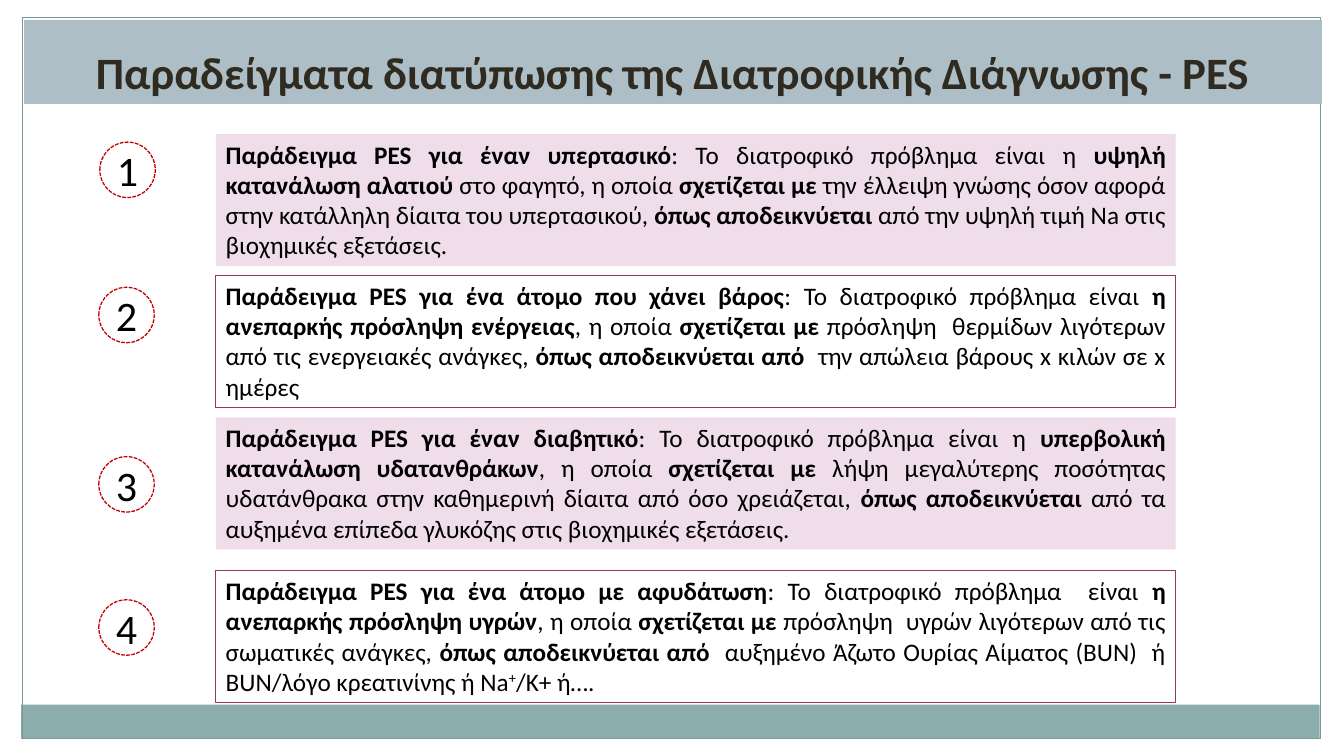
from pptx import Presentation
from pptx import util as u
from pptx.dml.color import RGBColor
from pptx.enum import dml, shapes, text

BLACK = RGBColor(0x00, 0x00, 0x00)
WHITE = RGBColor(0xFF, 0xFF, 0xFF)
TITLE_TEXT = RGBColor(0x2F, 0x2B, 0x20)
TITLE_BAND = RGBColor(0xAD, 0xBE, 0xC6)
FOOTER_BAND = RGBColor(0x8C, 0xAD, 0xAE)
FRAME = RGBColor(0x7C, 0x99, 0x9A)
PINK = RGBColor(0xEF, 0xDD, 0xEA)
PLUM = RGBColor(0x99, 0x33, 0x66)
RED = RGBColor(0xC0, 0x00, 0x00)

TITLE = "Παραδείγματα διατύπωσης της Διατροφικής Διάγνωσης - PES"

# ** toggles bold, ^ toggles superscript
EXAMPLES = [
    (1.33, 0.99, 1.41,
     "**Παράδειγμα PES για έναν υπερτασικό**: Το διατροφικό πρόβλημα είναι η "
     "**υψηλή κατανάλωση αλατιού** στο φαγητό, η οποία **σχετίζεται με** την "
     "έλλειψη γνώσης όσον αφορά στην κατάλληλη δίαιτα του υπερτασικού, "
     "**όπως αποδεικνύεται** από την υψηλή τιμή Na στις βιοχημικές εξετάσεις."),
    (2.73, 0.98, 2.85,
     "**Παράδειγμα PES για ένα άτομο που χάνει βάρος**: Το διατροφικό πρόβλημα "
     "είναι **η ανεπαρκής πρόσληψη ενέργειας**, η οποία **σχετίζεται με** "
     "πρόσληψη  θερμίδων λιγότερων από τις ενεργειακές ανάγκες, "
     "**όπως αποδεικνύεται από  **την απώλεια βάρους x κιλών σε x ημέρες"),
    (4.14, 0.98, 4.53,
     "**Παράδειγμα PES για έναν διαβητικό**: Το διατροφικό πρόβλημα είναι η "
     "**υπερβολική κατανάλωση υδατανθράκων**, η οποία **σχετίζεται με** λήψη "
     "μεγαλύτερης ποσότητας υδατάνθρακα στην καθημερινή δίαιτα από όσο "
     "χρειάζεται, **όπως αποδεικνύεται** από τα αυξημένα επίπεδα γλυκόζης στις "
     "βιοχημικές εξετάσεις."),
    (5.66, 0.98, 5.95,
     "**Παράδειγμα PES για ένα άτομο με αφυδάτωση**: Το διατροφικό πρόβλημα  "
     "είναι **η ανεπαρκής πρόσληψη υγρών**, η οποία **σχετίζεται με** πρόσληψη  "
     "υγρών λιγότερων από τις σωματικές ανάγκες, **όπως αποδεικνύεται από  **"
     "αυξημένο Άζωτο Ουρίας Αίματος (BUN)  ή BUN/λόγο κρεατινίνης ή "
     "Na^+^/K+ ή…."),
]


class DiagnosisSlide:
    font_name = "Calibri"

    def __init__(self, presentation):
        self.slide = presentation.slides.add_slide(presentation.slide_layouts[5])

    def style(self, paragraph, size, color, alignment):
        paragraph.alignment = alignment
        paragraph.font.name = self.font_name
        paragraph.font.size = u.Pt(size)
        paragraph.font.color.rgb = color

    def shape(self, kind, left, top, width, height, fill=None, line=None, weight=0.75):
        shape = self.slide.shapes.add_shape(
            kind, u.Inches(left), u.Inches(top), u.Inches(width), u.Inches(height))
        shape.shadow.inherit = False
        if fill is None:
            shape.fill.background()
        else:
            shape.fill.solid()
            shape.fill.fore_color.rgb = fill
        if line is None:
            shape.line.fill.background()
        else:
            shape.line.color.rgb = line
            shape.line.width = u.Pt(weight)
        return shape

    def band(self, left, top, width, height, **colors):
        return self.shape(shapes.MSO_SHAPE.RECTANGLE, left, top, width, height, **colors)

    def title(self, wording):
        title = self.slide.shapes.title
        title.left, title.top = u.Inches(0.24), u.Inches(0.2)
        title.width, title.height = u.Inches(12.87), u.Inches(0.83)
        title.fill.solid()
        title.fill.fore_color.rgb = TITLE_BAND
        frame = title.text_frame
        frame.text = wording
        frame.auto_size = text.MSO_AUTO_SIZE.NONE
        frame.vertical_anchor = text.MSO_ANCHOR.BOTTOM
        self.style(frame.paragraphs[0], 32, TITLE_TEXT, text.PP_ALIGN.CENTER)
        frame.paragraphs[0].font.bold = True
        self.slide.shapes._spTree.append(title._element)

    def number(self, value, left, top):
        circle = self.shape(shapes.MSO_SHAPE.OVAL, left, top, 0.55, 0.55, WHITE, RED, 0.9)
        circle.line.dash_style = dml.MSO_LINE.SQUARE_DOT
        frame = circle.text_frame
        frame.margin_left = frame.margin_right = frame.margin_top = frame.margin_bottom = 0
        frame.word_wrap = False
        frame.vertical_anchor = text.MSO_ANCHOR.MIDDLE
        frame.text = str(value)
        self.style(frame.paragraphs[0], 30, BLACK, text.PP_ALIGN.CENTER)

    def example(self, top, wording, **colors):
        frame = self.band(2.14, top, 9.52, 1.31, **colors).text_frame
        frame.word_wrap = True
        frame.auto_size = text.MSO_AUTO_SIZE.SHAPE_TO_FIT_TEXT
        frame.vertical_anchor = text.MSO_ANCHOR.TOP
        paragraph = frame.paragraphs[0]
        self.style(paragraph, 18, BLACK, text.PP_ALIGN.JUSTIFY)
        for bold_index, segment in enumerate(wording.split("**")):
            for raised_index, piece in enumerate(segment.split("^")):
                if not piece:
                    continue
                run = paragraph.add_run()
                run.text = piece
                run.font.bold = bold_index % 2 == 1
                if raised_index % 2:
                    run._r.get_or_add_rPr().set("baseline", "30000")


def main():
    presentation = Presentation()
    presentation.slide_width = u.Inches(13.33)
    presentation.slide_height = u.Inches(7.5)
    page = DiagnosisSlide(presentation)
    page.band(0.21, 6.99, 12.88, 0.34, fill=FOOTER_BAND)
    page.band(0.22, 0.17, 12.88, 7.16, line=FRAME)
    page.title(TITLE)
    for value, (box_top, circle_left, circle_top, wording) in enumerate(EXAMPLES, 1):
        colors = {"fill": PINK} if value % 2 else {"line": PLUM}
        page.example(box_top, wording, **colors)
        page.number(value, circle_left, circle_top)
    presentation.save("out.pptx")


if __name__ == "__main__":
    main()
